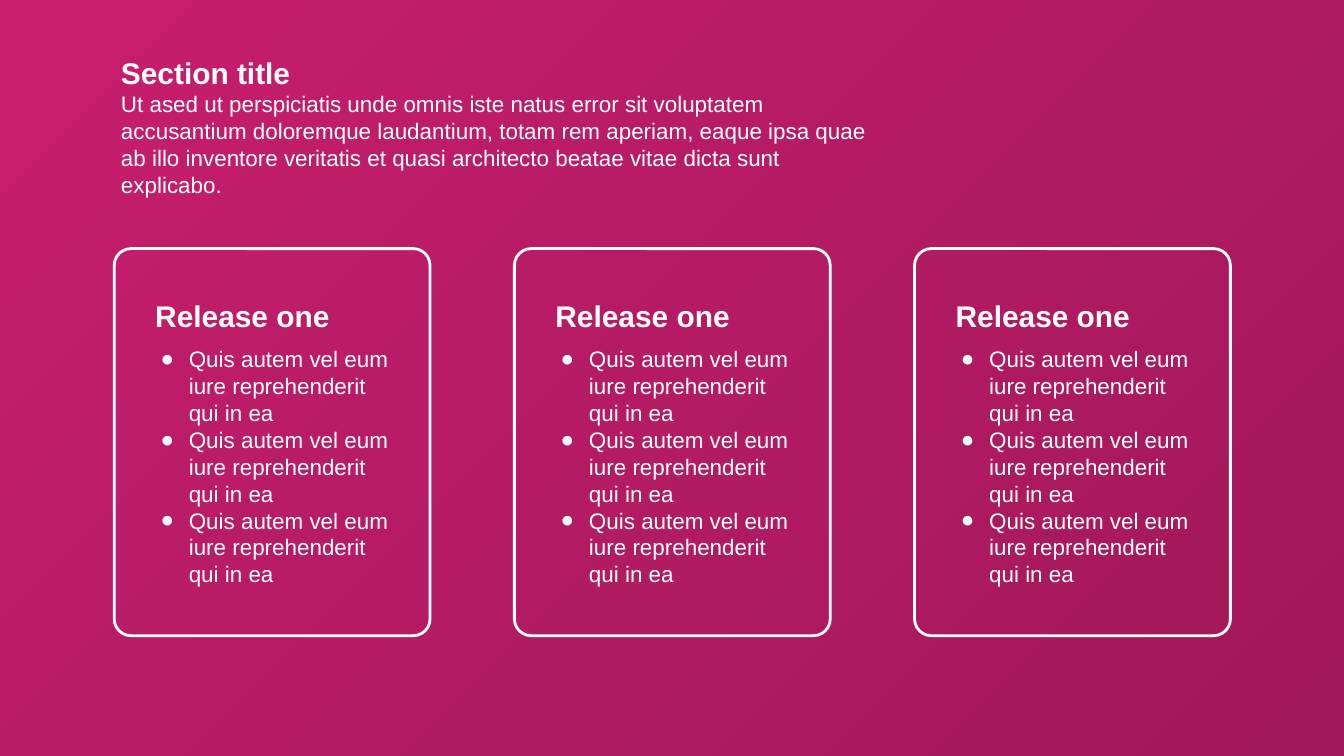
import pptx
import pptx.dml.color
import pptx.enum.shapes
import pptx.enum.text
import pptx.oxml
import pptx.oxml.ns
import pptx.util
from pptx.util import Inches

WHITE = "FFFFFF"
FONT = "Arial"
NS = pptx.oxml.ns.nsdecls("a")
CARD_COUNT = 3
CARD_LEFT = 1.7
CARD_STEP = 5.955
CARD_TITLE = "Release one"
CARD_ITEMS = ["Quis autem vel eum iure reprehenderit qui in ea"] * 3
SECTION_TITLE = "Section title"
SECTION_TEXT = (
    "Ut ased ut perspiciatis unde omnis iste natus error sit voluptatem "
    "accusantium doloremque laudantium, totam rem aperiam, eaque ipsa quae "
    "ab illo inventore veritatis et quasi architecto beatae vitae dicta sunt explicabo."
)


def color(value):
    return pptx.dml.color.RGBColor.from_string(value)


def add_span(para, text, size, bold=False):
    span = para.add_run()
    span.text = text
    span.font.name = FONT
    span.font.size = pptx.util.Pt(size)
    span.font.bold = bold
    span.font.color.rgb = color(WHITE)


def set_frame(box, inset):
    frame = box.text_frame
    frame.word_wrap = True
    frame.auto_size = pptx.enum.text.MSO_AUTO_SIZE.NONE
    frame.vertical_anchor = pptx.enum.text.MSO_ANCHOR.TOP
    frame.margin_left = frame.margin_right = Inches(inset)
    frame.margin_top = frame.margin_bottom = Inches(inset)
    return frame


def add_outline(shapes, kind, left, top, width, height, line, weight):
    shape = shapes.add_shape(kind, Inches(left), Inches(top), Inches(width), Inches(height))
    shape.shadow.inherit = False
    shape.fill.background()
    shape.line.color.rgb = color(line)
    shape.line.width = pptx.util.Pt(weight)
    return shape


def add_backdrop(page):
    kind = pptx.enum.shapes.MSO_SHAPE.RECTANGLE
    shape = add_outline(page.shapes, kind, -0.1, -0.05, 20.1, 11.38, "595959", 0.75)
    shape.fill.gradient()
    for stop, value, position in zip(shape.fill.gradient_stops, ("A01858", "C81E6E"), (0, 1)):
        stop.color.rgb = color(value)
        stop.position = position
    linear = shape.element.spPr.find(".//" + pptx.oxml.ns.qn("a:lin"))
    radial = pptx.oxml.parse_xml(
        f'<a:path {NS} path="circle"><a:fillToRect l="100000" t="100000"/></a:path>'
    )
    linear.getparent().replace(linear, radial)


def add_bullet(para):
    props = para._p.get_or_add_pPr()
    props.set("marL", str(Inches(0.5)))
    props.set("indent", str(Inches(-0.42)))
    for xml in (
        f'<a:buClr {NS}><a:srgbClr val="{WHITE}"/></a:buClr>',
        f'<a:buFont {NS} typeface="{FONT}"/>',
        f'<a:buChar {NS} char="●"/>',
    ):
        props.append(pptx.oxml.parse_xml(xml))


def add_text_box(shapes, left, top, width, height):
    box = shapes.add_textbox(Inches(left), Inches(top), Inches(width), Inches(height))
    return set_frame(box, 0.2)


def add_card(page, left, title, items):
    shapes = page.shapes.add_group_shape().shapes
    kind = pptx.enum.shapes.MSO_SHAPE.ROUNDED_RECTANGLE
    border = add_outline(shapes, kind, left, 3.7, 4.7, 5.76, WHITE, 3)
    border.adjustments[0] = 0.053
    heading = add_text_box(shapes, left + 0.41, 4.23, 3.58, 0.79)
    add_span(heading.paragraphs[0], title, 32, True)
    body = add_text_box(shapes, left + 0.41, 4.94, 3.9, 3.43)
    for index, item in enumerate(items):
        para = body.add_paragraph() if index else body.paragraphs[0]
        add_bullet(para)
        add_span(para, item, 24)


def add_section(page, title, text):
    box = page.shapes.title
    box.left, box.top = Inches(1.7), Inches(0.71)
    box.width, box.height = Inches(11.5), Inches(1.76)
    frame = set_frame(box, 0.1)
    heading, body = frame.paragraphs[0], frame.add_paragraph()
    heading.alignment = body.alignment = pptx.enum.text.PP_ALIGN.LEFT
    add_span(heading, title, 32, True)
    add_span(body, text, 24)
    box.element.getparent().append(box.element)


def main():
    deck = pptx.Presentation()
    deck.slide_width, deck.slide_height = Inches(20), Inches(11.25)
    page = deck.slides.add_slide(deck.slide_layouts[5])
    add_backdrop(page)
    for index in range(CARD_COUNT):
        add_card(page, CARD_LEFT + index * CARD_STEP, CARD_TITLE, CARD_ITEMS)
    add_section(page, SECTION_TITLE, SECTION_TEXT)
    deck.save("out.pptx")


if __name__ == "__main__":
    main()
